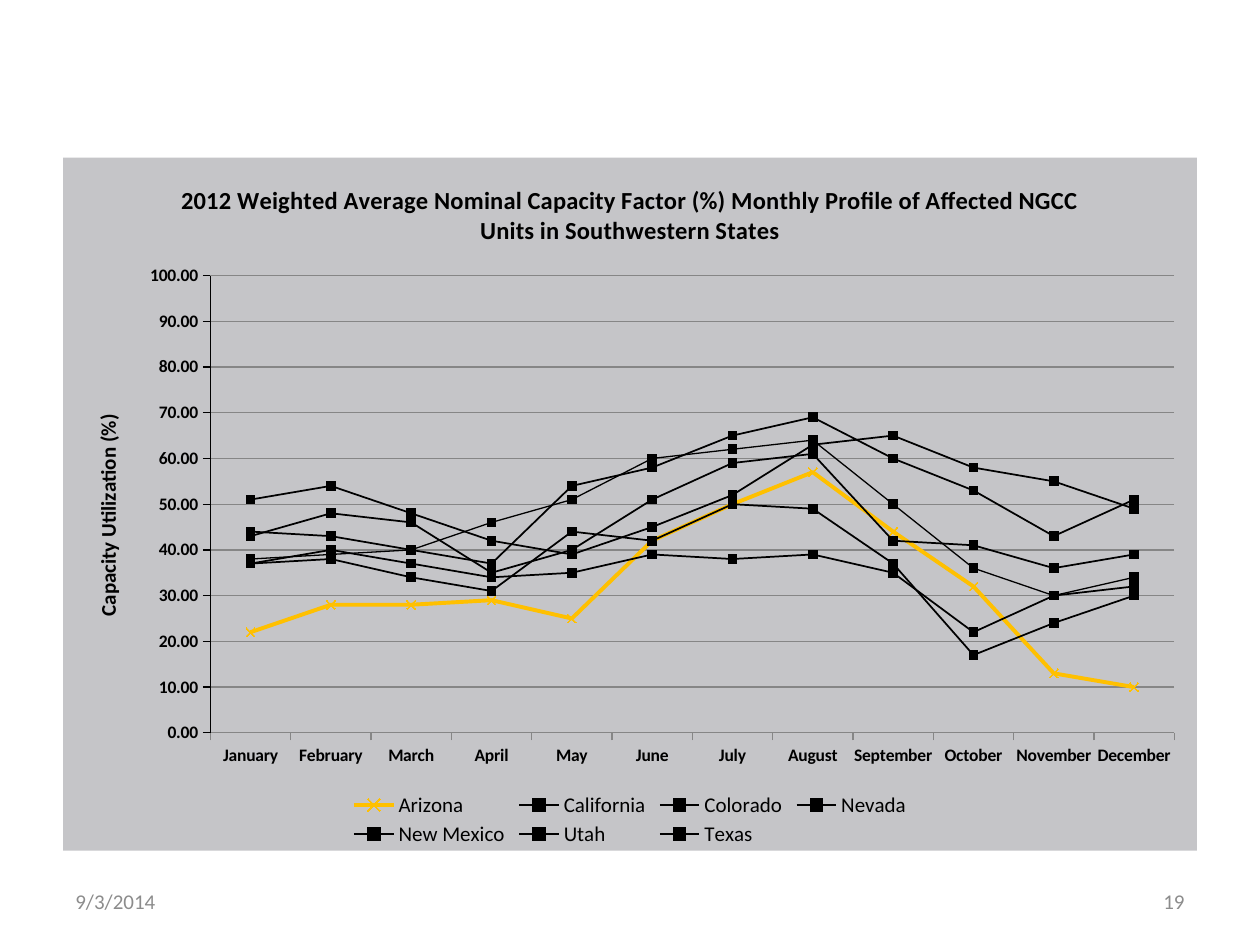
from lxml import etree
from pptx import Presentation
from pptx.chart.data import CategoryChartData
from pptx.dml.color import RGBColor
from pptx.enum.chart import XL_CHART_TYPE, XL_LEGEND_POSITION, XL_MARKER_STYLE, XL_TICK_MARK
from pptx.enum.text import MSO_ANCHOR, PP_ALIGN
from pptx.oxml import parse_xml
from pptx.util import Cm, Pt

LINE_MARKERS = XL_CHART_TYPE.LINE_MARKERS
BOTTOM = XL_LEGEND_POSITION.BOTTOM
CROSS, SQUARE = XL_MARKER_STYLE.X, XL_MARKER_STYLE.SQUARE
TICK_OUT = XL_TICK_MARK.OUTSIDE
MIDDLE = MSO_ANCHOR.MIDDLE
LEFT, RIGHT = PP_ALIGN.LEFT, PP_ALIGN.RIGHT
C = "http://schemas.openxmlformats.org/drawingml/2006/chart"
A = "http://schemas.openxmlformats.org/drawingml/2006/main"
BLACK, GOLD, GRID, PANEL, MUTED = "000000", "FFC000", "868686", "C5C5C8", "8C8C8C"


def write(tf, text, size=12, color=BLACK, bold=False, align=None):
    p = tf.paragraphs[0]
    p.alignment = align
    r = p.add_run()
    r.text = text
    r.font.name, r.font.size, r.font.bold = "Calibri", Pt(size), bold
    r.font.color.rgb = RGBColor.from_string(color)


def layout(x, y, w, h, inner=False):
    node = etree.Element(f"{{{C}}}layout")
    manual = etree.SubElement(node, f"{{{C}}}manualLayout")
    values = [("layoutTarget", "inner")] if inner else []
    values += [("xMode", "edge"), ("yMode", "edge"), ("x", x), ("y", y), ("w", w), ("h", h)]
    for tag, value in values:
        etree.SubElement(manual, f"{{{C}}}{tag}").set("val", str(value))
    return node


prs = Presentation()
prs.slide_width, prs.slide_height = Cm(25.4), Cm(19.05)
s = prs.slides.add_slide(prs.slide_layouts[6])

# Monthly capacity factors: name, marker colour, values
months = ["January", "February", "March", "April", "May", "June", "July",
          "August", "September", "October", "November", "December"]
states = [
    ("Arizona", GOLD, [22, 28, 28, 29, 25, 42, 50, 57, 44, 32, 13, 10]),
    ("California", "00FF00", [51, 54, 48, 42, 39, 45, 52, 63, 65, 58, 55, 49]),
    ("Colorado", "FF0000", [37, 38, 34, 31, 44, 42, 50, 49, 37, 17, 24, 30]),
    ("Nevada", "6600CC", [44, 43, 40, 37, 54, 58, 65, 69, 60, 53, 43, 51]),
    ("New Mexico", "00B0F0", [43, 48, 46, 35, 40, 51, 59, 61, 42, 41, 36, 39]),
    ("Utah", "0000FF", [37, 40, 37, 34, 35, 39, 38, 39, 35, 22, 30, 32]),
    ("Texas", "FF00FF", [38, 39, 40, 46, 51, 60, 62, 64, 50, 36, 30, 34]),
]
widths = {"Arizona": 2.25, "Texas": 0.75}
data = CategoryChartData()
data.categories = months
for name, _, values in states:
    data.add_series(name, values)
chart = s.shapes.add_chart(LINE_MARKERS, Cm(1.27), Cm(3.18), Cm(22.86), Cm(13.97), data).chart
chart.font.name, chart.font.size = "Calibri", Pt(10)
chart.font.color.rgb = RGBColor.from_string(BLACK)
chart.has_title = True
write(chart.chart_title.text_frame,
      "2012 Weighted Average Nominal Capacity Factor (%) Monthly Profile of "
      "Affected NGCC Units in Southwestern States", size=14, bold=True)
chart.chart_title.include_in_layout = False

# Series lines and markers
plot = chart.plots[0]
plot.vary_by_categories = False
for series, (name, marker_color, _) in zip(plot.series, states):
    series.smooth = False
    line_color = GOLD if name == "Arizona" else BLACK
    series.format.line.color.rgb = RGBColor.from_string(line_color)
    series.format.line.width = Pt(widths.get(name, 1))
    marker = series.marker
    marker.style = CROSS if name == "Arizona" else SQUARE
    marker.size = 5
    marker.format.fill.solid()
    marker.format.fill.fore_color.rgb = RGBColor.from_string(marker_color)
    marker.format.line.color.rgb = RGBColor.from_string(marker_color)

# Axes
cat_axis, val_axis = chart.category_axis, chart.value_axis
for axis, color in ((cat_axis, GRID), (val_axis, BLACK)):
    axis.major_tick_mark = TICK_OUT
    axis.tick_labels.font.size = Pt(10)
    axis.tick_labels.font.bold = True
    axis.format.line.color.rgb = RGBColor.from_string(color)
    axis.format.line.width = Pt(0.75)
val_axis.minimum_scale, val_axis.maximum_scale, val_axis.major_unit = 0, 100, 10
val_axis.tick_labels.number_format = "0.00"
val_axis.tick_labels.number_format_is_linked = False
val_axis.has_major_gridlines = True
val_axis.major_gridlines.format.line.color.rgb = RGBColor.from_string(GRID)
val_axis.major_gridlines.format.line.width = Pt(0.75)
write(val_axis.axis_title.text_frame, "Capacity Utilization (%)", bold=True)

# Legend, plot position and panel fill
chart.has_legend = True
legend = chart.legend
legend.position = BOTTOM
legend.include_in_layout = False
legend.font.size = Pt(12)
legend.font.color.rgb = RGBColor.from_string(BLACK)
root = chart.element
for parent, index, node in (
    (root.find(f".//{{{C}}}plotArea"), 0, layout(0.13, 0.17, 0.85, 0.66, inner=True)),
    (root.find(f".//{{{C}}}legend"), 1, layout(0.25, 0.91, 0.5, 0.09)),
):
    for old in parent.findall(f"{{{C}}}layout"):
        parent.remove(old)
    parent.insert(index, node)
root.find(f"{{{C}}}chart").addnext(parse_xml(
    f'<c:spPr xmlns:c="{C}" xmlns:a="{A}"><a:solidFill><a:srgbClr val="{PANEL}"/></a:solidFill>'
    '<a:ln><a:noFill/></a:ln></c:spPr>'))

# Date and slide number
for x, text, align in ((1.27, "9/3/2014", LEFT), (18.2, "19", RIGHT)):
    tf = s.shapes.add_textbox(Cm(x), Cm(17.66), Cm(5.93), Cm(1.01)).text_frame
    tf.word_wrap = True
    tf.vertical_anchor = MIDDLE
    write(tf, text, color=MUTED, align=align)

prs.save("out.pptx")
